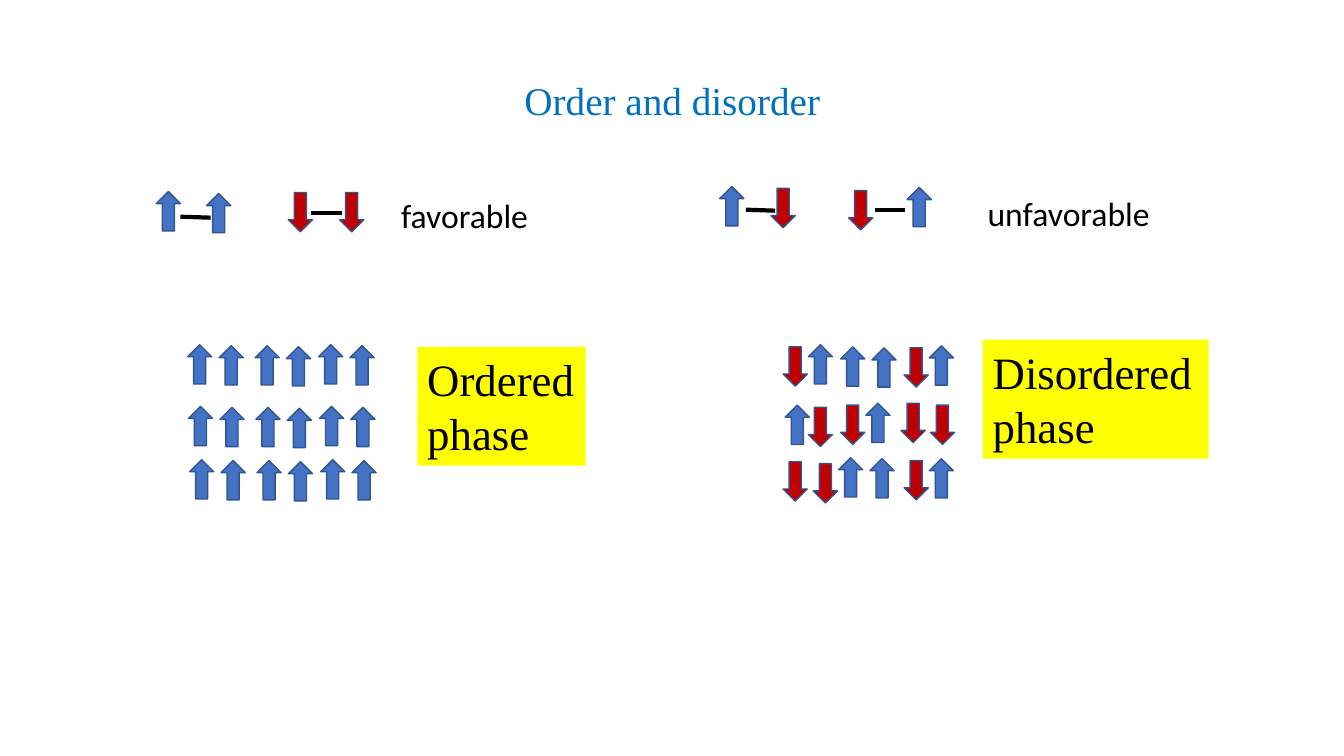
import pptx
import pptx.dml.color
import pptx.enum.shapes
import pptx.enum.text
import pptx.oxml.ns
import pptx.util
from lxml import etree

Pt = pptx.util.Pt
RGB = pptx.dml.color.RGBColor.from_string
SHAPE = pptx.enum.shapes.MSO_SHAPE
TEXT = pptx.enum.text

THEME = {
    "up": "4472C4", "down": "C00000", "outline": "325491",
    "bond": "000000", "highlight": "FFFF00",
    "title": {"name": "Times New Roman", "size": Pt(28), "color": "0070C0"},
    "label": {"name": "Calibri", "size": Pt(24), "color": "000000"},
    "phase": {"name": "Times New Roman", "size": Pt(32), "color": "000000"},
}

# Content: all lengths in points
TITLE = "Order and disorder"
TITLE_BOX = (66.2, 28.8, 828, 88.6)
ARROW_SIZE = (17.3, 28.1)

# Text boxes: lines, box, style, fill
CAPTIONS = [
    (["favorable"], (279.4, 135.4, 106.6, 36), "label", None),
    (["unfavorable"], (698.4, 133.9, 131.8, 36), "label", None),
    (["Ordered", "phase"], (298.1, 247.7, 120.2, 85), "phase", "highlight"),
    (["Disordered", "phase"], (702, 242.6, 161.3, 85), "phase", "highlight"),
]

# Neighbouring spins: left, top, direction
PAIR_SPINS = [
    (111.6, 136.8, "up"), (147.6, 138.2, "up"),
    (205.9, 137.5, "down"), (242.6, 137.5, "down"),
    (514.1, 133.2, "up"), (550.8, 134.6, "down"),
    (606.2, 136.1, "down"), (648, 133.9, "up"),
]
BONDS = [
    (128.9, 154.8, 150.5, 155.5), (222.5, 151.9, 244.1, 151.9),
    (532.8, 149.8, 553.7, 150.5), (625, 149.8, 646.6, 149.8),
]

# Ordered lattice: row origins and the offsets shared by every row
ORDERED_ROWS = [(134, 246.2), (134.6, 290.2), (135.4, 328.3)]
ORDERED_OFFSETS = [(0, 0), (22.5, 0.7), (48.2, 0.7), (70.6, 1.4), (93.6, 0), (116, 0.7)]

DISORDERED_SPINS = [
    (559.4, 247.7, "down"), (577.4, 246.2, "up"), (600.5, 247.7, "up"),
    (622.8, 248.4, "up"), (645.8, 248.4, "down"), (663.8, 247, "up"),
    (560.9, 289.4, "up"), (577.4, 290.9, "down"), (600.5, 289.4, "down"),
    (618.5, 288, "up"), (643.7, 288, "down"), (664.6, 289.4, "down"),
    (559.4, 329.8, "down"), (581, 331.2, "down"), (599, 326.9, "up"),
    (621.4, 327.6, "up"), (645.8, 329, "down"), (663.8, 327.6, "up"),
]


def points(values):
    return [Pt(value) for value in values]


def write(frame, lines, style):
    frame.text = "\n".join(lines)
    for paragraph in frame.paragraphs:
        for key, value in THEME[style].items():
            if key == "color":
                paragraph.font.color.rgb = RGB(value)
            else:
                setattr(paragraph.font, key, value)


def add_spins(shapes, spins):
    for left, top, direction in spins:
        kind = SHAPE.UP_ARROW if direction == "up" else SHAPE.DOWN_ARROW
        spin = shapes.add_shape(kind, *points((left, top, *ARROW_SIZE)))
        spin.shadow.inherit = False
        spin.fill.solid()
        spin.fill.fore_color.rgb = RGB(THEME[direction])
        spin.line.color.rgb = RGB(THEME["outline"])
        spin.line.width = Pt(1)


def add_caption(shapes, lines, box, style, fill):
    caption = shapes.add_textbox(*points(box))
    caption.text_frame.word_wrap = True
    write(caption.text_frame, lines, style)
    if fill:
        caption.fill.solid()
        caption.fill.fore_color.rgb = RGB(THEME[fill])


def add_bond(shapes, ends):
    bond = shapes.add_connector(pptx.enum.shapes.MSO_CONNECTOR.STRAIGHT, *points(ends))
    bond.line.color.rgb = RGB(THEME["bond"])
    bond.line.width = Pt(3)
    etree.SubElement(bond._element.spPr, pptx.oxml.ns.qn("a:effectLst"))


def main():
    deck = pptx.Presentation()
    deck.slide_width, deck.slide_height = Pt(960), Pt(540)
    slide = deck.slides.add_slide(deck.slide_layouts[5])

    # Title
    title = slide.shapes.title
    title.left, title.top, title.width, title.height = points(TITLE_BOX)
    write(title.text_frame, [TITLE], "title")
    title.text_frame.vertical_anchor = TEXT.MSO_ANCHOR.MIDDLE
    title.text_frame.auto_size = TEXT.MSO_AUTO_SIZE.NONE
    title.text_frame.paragraphs[0].alignment = TEXT.PP_ALIGN.CENTER
    title.text_frame.paragraphs[0].line_spacing = 0.9

    # Favorable and unfavorable pairs
    add_spins(slide.shapes, PAIR_SPINS)

    # Ordered lattice, one group a row
    for row_left, row_top in ORDERED_ROWS:
        row = [(row_left + dx, row_top + dy, "up") for dx, dy in ORDERED_OFFSETS]
        add_spins(slide.shapes.add_group_shape().shapes, row)

    # Disordered lattice
    add_spins(slide.shapes.add_group_shape().shapes, DISORDERED_SPINS)

    # Captions and bonds
    for caption in CAPTIONS:
        add_caption(slide.shapes, *caption)
    for ends in BONDS:
        add_bond(slide.shapes, ends)

    deck.save("out.pptx")


if __name__ == "__main__":
    main()
